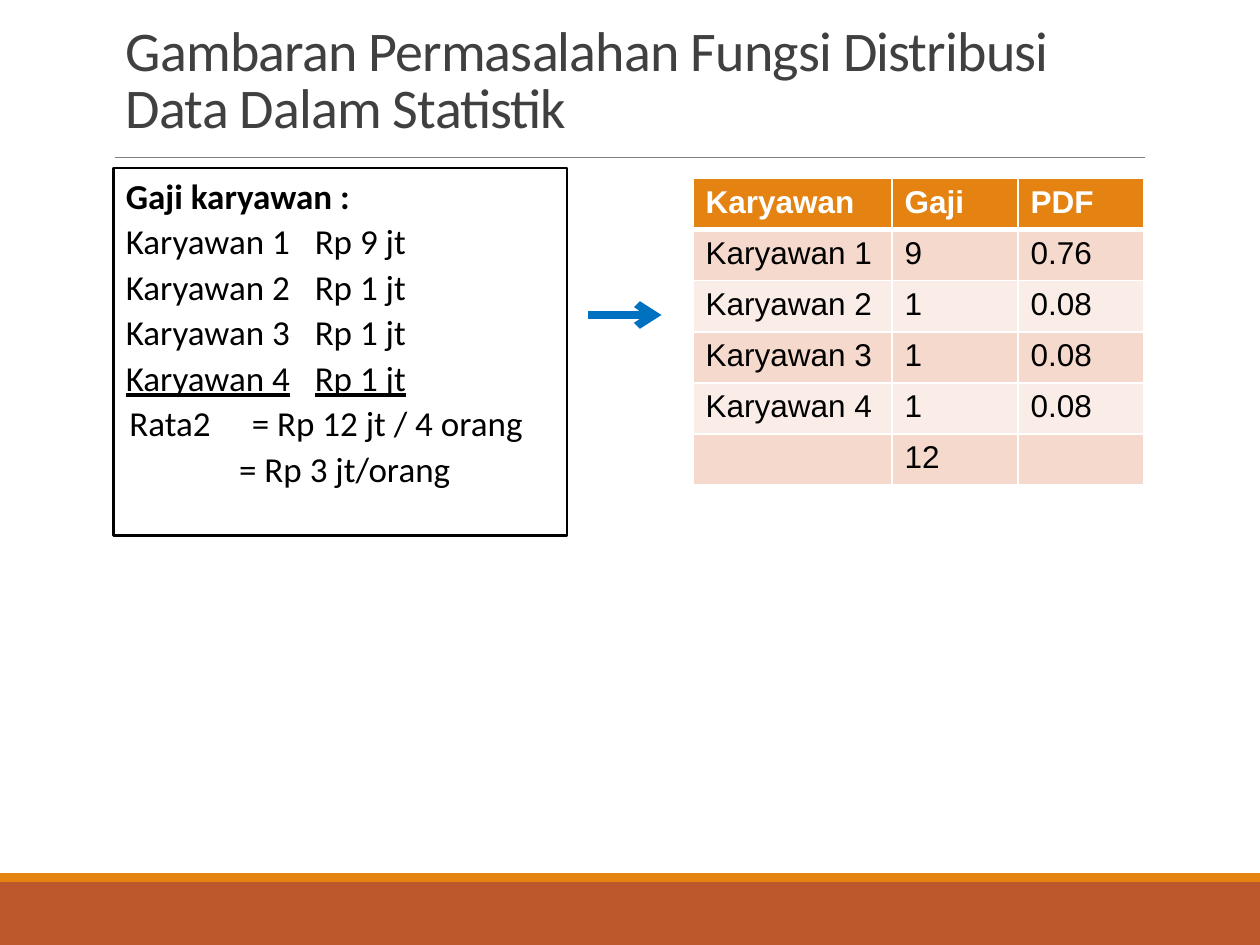
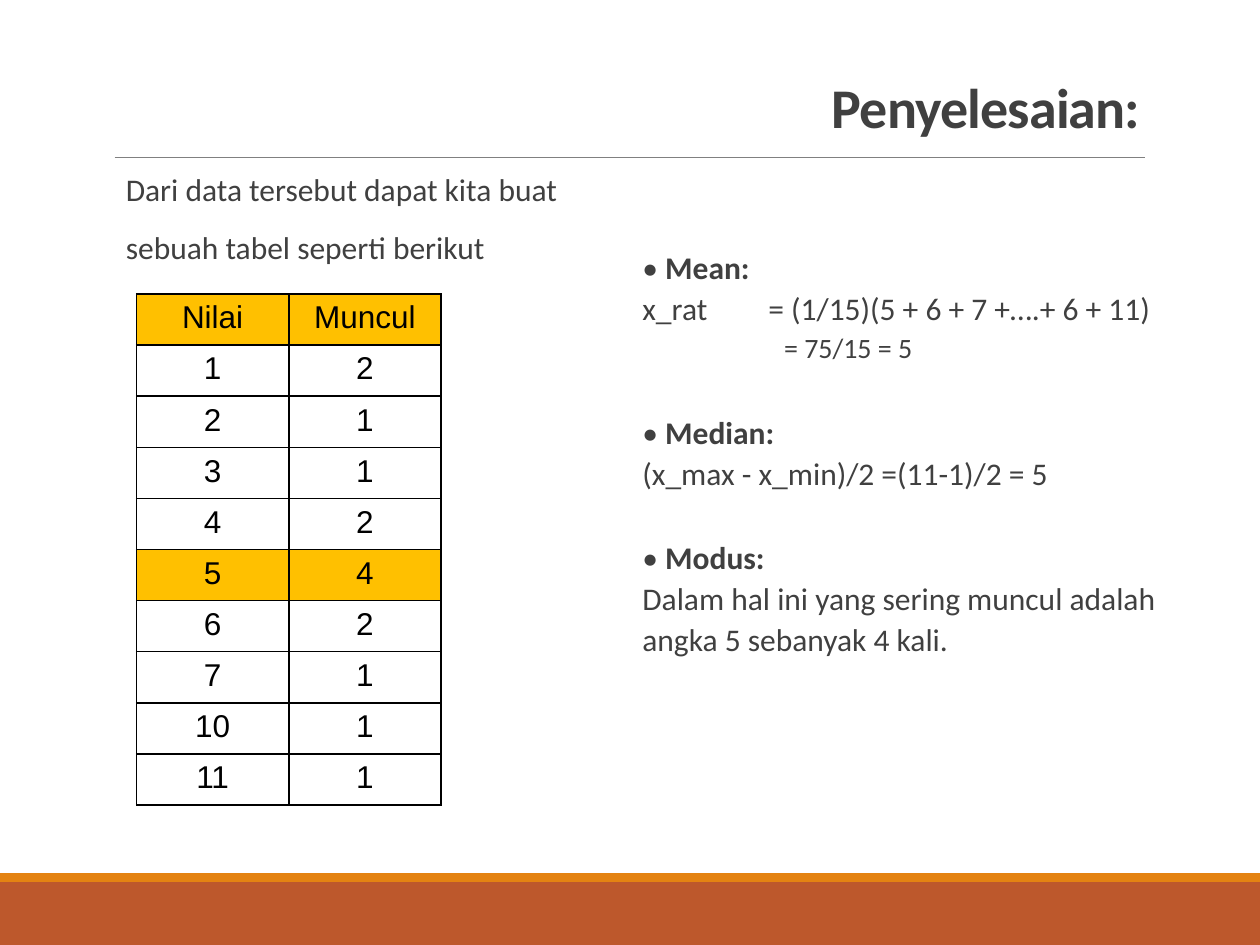
from lxml import etree
from pptx import Presentation
from pptx.dml.color import RGBColor
from pptx.enum import shapes, text
from pptx.oxml import ns
from pptx.util import Pt

WIDTH, HEIGHT = 720, 540
RUST, ORANGE, GREY, DARK = "BD582C", "E48312", "808080", "404040"
BLACK, WHITE, BLUE, GOLD = "000000", "FFFFFF", "0070C0", "FFC000"
BANDS = "F5D9CC", "FAEDE7"
TITLE_BOX = 64.8, 22.3, 594, 61.2
FONT, TABLE_FONT = "Calibri", "Arial"
INSET = 7.2
ROW_HEIGHT = 29.2
ALIGN = text.PP_ALIGN


def rgb(value):
    return RGBColor.from_string(value)


def pts(box):
    return [Pt(v) for v in box]


def add_run(p, words, size, color, bold=False, underline=False, font=FONT):
    r = p.add_run()
    r.text = words
    f = r.font
    f.name, f.size, f.bold, f.underline = font, Pt(size), bold, underline
    f.color.rgb = rgb(color)
    return r


def add_rect(s, box, color):
    sp = s.shapes.add_shape(shapes.MSO_SHAPE.RECTANGLE, *pts(box))
    sp.shadow.inherit = False
    sp.fill.solid()
    sp.fill.fore_color.rgb = rgb(color)
    sp.line.fill.background()


def add_line(s, start, end, color, width, arrow=False):
    line = s.shapes.add_connector(shapes.MSO_CONNECTOR.STRAIGHT, *pts(start + end))
    line.line.color.rgb = rgb(color)
    line.line.width = Pt(width)
    if arrow:
        etree.SubElement(line.line._get_or_add_ln(), ns.qn("a:tailEnd"), type="arrow")
    etree.SubElement(line._element.spPr, ns.qn("a:effectLst"))


def add_text_box(s, box):
    sp = s.shapes.add_textbox(*pts(box))
    tf = sp.text_frame
    tf.word_wrap = True
    tf.margin_left, tf.margin_right = Pt(INSET), 0
    return sp


def add_paragraph(tf, before=0, after=2, spacing=None, indent=0, tab=None):
    """Use the empty first paragraph, or append one, and set its layout."""
    p = tf.paragraphs[0]
    if p.runs:
        p = tf.add_paragraph()
    p.space_before, p.space_after = Pt(before), Pt(after)
    if spacing:
        p.line_spacing = spacing
    p_pr = p._p.get_or_add_pPr()
    p_pr.set("marL", "0")
    p_pr.set("indent", str(Pt(indent)))
    if tab:
        tabs = etree.SubElement(p_pr, ns.qn("a:tabLst"))
        etree.SubElement(tabs, ns.qn("a:tab"), pos=str(Pt(tab)), algn="l")
    return p


def add_base(prs, title, align=ALIGN.LEFT, bold=False):
    """Add a slide with the footer bands, the title and the rule under it."""
    s = prs.slides.add_slide(prs.slide_layouts[6])
    add_rect(s, (0, 504, WIDTH, 36), RUST)
    add_rect(s, (0, 499, WIDTH, 5), ORANGE)
    add_line(s, (65.5, 90), (654.5, 90), GREY, 0.5)
    tf = add_text_box(s, TITLE_BOX).text_frame
    tf.margin_right = Pt(INSET)
    tf.vertical_anchor = text.MSO_ANCHOR.BOTTOM
    p = add_paragraph(tf, after=0, spacing=0.85)
    p.alignment = align
    r = add_run(p, title, 32, DARK, bold)
    r._r.get_or_add_rPr().set("spc", "-50")
    return s


def set_borders(cell, color, bottom):
    tc_pr = cell._tc.get_or_add_tcPr()
    sides = ("lnL", 1), ("lnR", 1), ("lnT", 1), ("lnB", bottom)
    for i, (side, width) in enumerate(sides):
        ln = etree.Element(ns.qn("a:" + side), w=str(Pt(width)))
        fill = etree.SubElement(ln, ns.qn("a:solidFill"))
        etree.SubElement(fill, ns.qn("a:srgbClr"), val=color)
        tc_pr.insert(i, ln)


def add_grid(s, left, top, widths, rows, fills, border, header_color=BLACK,
             header_bold=False, header_rule=1, align=ALIGN.LEFT):
    """Add a table whose rows take their colours from fills."""
    box = left, top, sum(widths), ROW_HEIGHT * len(rows)
    table = s.shapes.add_table(len(rows), len(widths), *pts(box)).table
    table.first_row = table.horz_banding = False
    for column, width in zip(table.columns, widths):
        column.width = Pt(width)
    for i, (row, fill) in enumerate(zip(rows, fills)):
        table.rows[i].height = Pt(ROW_HEIGHT)
        header = i == 0
        for j, words in enumerate(row):
            cell = table.cell(i, j)
            cell.fill.solid()
            cell.fill.fore_color.rgb = rgb(fill)
            set_borders(cell, border, header_rule if header else 1)
            p = cell.text_frame.paragraphs[0]
            p.alignment = align
            if words:
                add_run(p, words, 18, header_color if header else BLACK,
                        header and header_bold, font=TABLE_FONT)


def add_salary_box(s, box, salaries):
    sp = add_text_box(s, box)
    sp.line.color.rgb = rgb(BLACK)
    sp.line.width = Pt(1.5)
    tf = sp.text_frame
    add_run(add_paragraph(tf), "Gaji karyawan :", 20, BLACK, bold=True)
    for i, (name, salary) in enumerate(salaries, 1):
        p = add_paragraph(tf, tab=136.8)
        add_run(p, f"{name}\tRp {salary} jt", 20, BLACK, underline=i == len(salaries))
    add_run(add_paragraph(tf, indent=2, tab=64.8), "Rata2\t= Rp 12 jt / 4 orang", 20, BLACK)
    add_run(add_paragraph(tf, indent=64.8), "= Rp 3 jt/orang", 20, BLACK)


def build_problem(prs):
    s = add_base(prs, "Gambaran Permasalahan Fungsi Distribusi Data Dalam Statistik")
    salaries = [(f"Karyawan {i}", pay) for i, pay in enumerate((9, 1, 1, 1), 1)]
    add_salary_box(s, (64.8, 96, 259.2, 210), salaries)
    shares = "0.76", "0.08", "0.08", "0.08"
    rows = [("Karyawan", "Gaji", "PDF")]
    rows += [(name, str(pay), share) for (name, pay), share in zip(salaries, shares)]
    rows.append(("", "12", ""))
    fills = [ORANGE] + [BANDS[i % 2] for i in range(len(rows) - 1)]
    add_grid(s, 396, 102, (113.8, 72, 72), rows, fills, WHITE,
             header_color=WHITE, header_bold=True, header_rule=3)
    add_line(s, (336, 180), (378, 180), BLUE, 4.5, arrow=True)


def add_measures(s, box):
    tf = add_text_box(s, box).text_frame

    def heading(words, before=24):
        p = add_paragraph(tf, before=before)
        add_run(p, "• ", 18, DARK)
        add_run(p, words, 18, DARK, bold=True)

    def line(words, size=18, **layout):
        add_run(add_paragraph(tf, **layout), words, size, DARK)

    heading("Mean:", before=0)
    line("x_rat\t= (1/15)(5 + 6 + 7 +….+ 6 + 11)", tab=64.8)
    line("= 75/15 = 5", 16, indent=81, after=4)
    heading("Median:")
    line("(x_max - x_min)/2 =(11-1)/2 = 5")
    heading("Modus:")
    line("Dalam hal ini yang sering muncul adalah")
    line("angka 5 sebanyak 4 kali.")


def build_solution(prs):
    s = add_base(prs, "Penyelesaian:", ALIGN.RIGHT, bold=True)
    tf = add_text_box(s, (64.8, 96, 301, 78)).text_frame
    for words in ("Dari data tersebut dapat kita buat", "sebuah tabel seperti berikut"):
        add_run(add_paragraph(tf, before=12, spacing=0.9), words, 18, DARK)
    counts = {1: 2, 2: 1, 3: 1, 4: 2, 5: 4, 6: 2, 7: 1, 10: 1, 11: 1}
    mode = max(counts, key=counts.get)
    rows = [("Nilai", "Muncul")] + [(str(v), str(n)) for v, n in counts.items()]
    fills = [GOLD] + [GOLD if v == mode else WHITE for v in counts]
    add_grid(s, 78, 168, (87, 87), rows, fills, BLACK, align=ALIGN.CENTER)
    add_measures(s, (360, 138, 360, 306))


def main():
    prs = Presentation()
    prs.slide_width, prs.slide_height = Pt(WIDTH), Pt(HEIGHT)
    build_problem(prs)
    build_solution(prs)
    prs.save("out.pptx")


if __name__ == "__main__":
    main()
